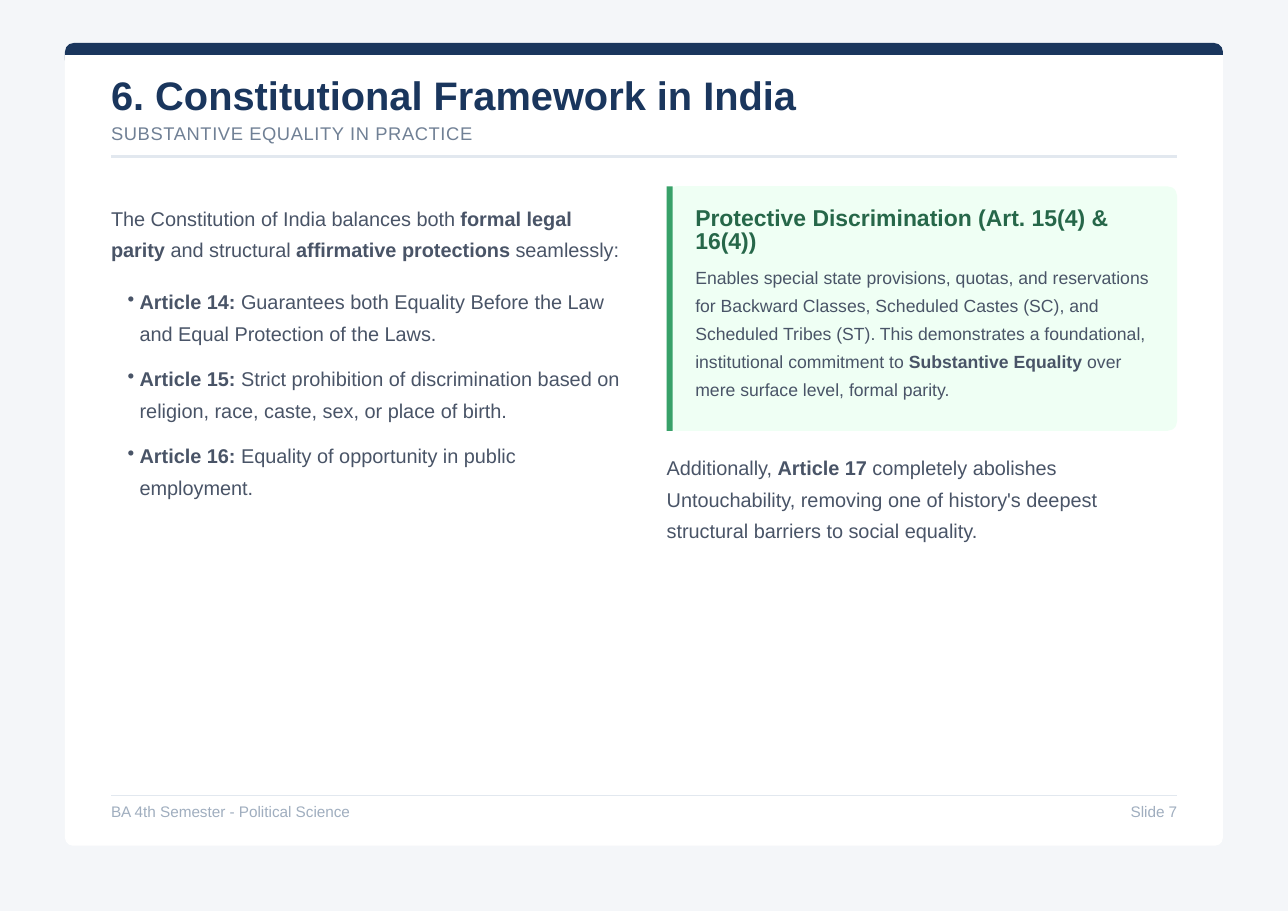
from pptx import Presentation
from pptx.dml.color import RGBColor
from pptx.enum.shapes import MSO_CONNECTOR, MSO_SHAPE
from pptx.enum.text import PP_ALIGN
from pptx.oxml.ns import qn
from pptx.util import Inches, Pt
from lxml.etree import SubElement

C = {"page": "F4F6F9", "card": "FFFFFF", "navy": "1A365D", "rule": "E2E8EF",
     "mint": "EFFFF4", "green": "38A169", "forest": "266749",
     "body": "495467", "muted": "708095", "footer": "A0AEBF"}
LEFT, RIGHT, WIDE = 8.62, 51.76, 82.78
MARGIN, CARD = 5.05, 89.9

prs = Presentation()
prs.slide_width, prs.slide_height = Inches(11.69), Inches(8.27)
s = prs.slides.add_slide(prs.slide_layouts[6])
s.background.fill.solid()
s.background.fill.fore_color.rgb = RGBColor.from_string(C["page"])


def area(x, y, w, h):
    W, H = prs.slide_width, prs.slide_height
    return [int(v * side / 100) for v, side in zip((x, y, w, h), (W, H, W, H))]


def add_text(place, paragraphs, align=PP_ALIGN.LEFT):
    tf = s.shapes.add_textbox(*area(*place)).text_frame
    tf.word_wrap = True
    tf.margin_left = tf.margin_right = tf.margin_top = tf.margin_bottom = 0
    for i, (text, size, color, bold, line, before, indent, bullet) in enumerate(paragraphs):
        p = tf.add_paragraph() if i else tf.paragraphs[0]
        pPr = p._p.get_or_add_pPr()
        pPr.set("marL", str(Inches(indent)))
        pPr.set("indent", str(Inches(-0.11 if bullet else 0)))
        if bullet:
            SubElement(pPr, qn("a:buChar")).set("char", "•")
        p.alignment = align
        p.space_before = Pt(before)
        if line:
            p.line_spacing = Pt(line)
        for j, part in enumerate(text.split("**")):
            if part:
                r = p.add_run()
                r.text = part
                r.font.name = "Arial"
                r.font.size = Pt(size)
                r.font.bold = bold or j % 2 == 1
                r.font.color.rgb = RGBColor.from_string(C[color])
    return tf


for kind, place, color, corners in [
    (MSO_SHAPE.ROUND_2_SAME_RECTANGLE, (MARGIN, 4.72, CARD, 1.9), "navy", (0.5, 0)),
    (MSO_SHAPE.ROUND_2_SAME_RECTANGLE, (MARGIN, 6.05, CARD, 86.78), "card", (0, 0.01)),
    (MSO_SHAPE.ROUNDED_RECTANGLE, (RIGHT, 20.45, 39.64, 26.85), "mint", (0.04,)),
    (MSO_SHAPE.RECTANGLE, (RIGHT, 20.45, 0.47, 26.85), "green", ()),
]:
    sp = s.shapes.add_shape(kind, *area(*place))
    sp.shadow.inherit = False
    sp.fill.solid()
    sp.fill.fore_color.rgb = RGBColor.from_string(C[color])
    sp.line.fill.background()
    for i, corner in enumerate(corners):
        sp.adjustments[i] = corner

for y, width in [(17.17, 1.5), (87.36, 0.75)]:
    x, top, w, _ = area(LEFT, y, WIDE, 0)
    ln = s.shapes.add_connector(MSO_CONNECTOR.STRAIGHT, x, top, x + w, top)
    ln.line.color.rgb = RGBColor.from_string(C["rule"])
    ln.line.width = Pt(width)
    SubElement(ln._element.spPr, qn("a:effectLst"))

heading = add_text((LEFT, 7.73, 70, 8), [
    ("6. Constitutional Framework in India", 26, "navy", True, None, 0, 0, False),
    ("SUBSTANTIVE EQUALITY IN PRACTICE", 12, "muted", False, None, 2.4, 0, False),
])
for r in heading.paragraphs[1].runs:
    r._r.get_or_add_rPr().set("spc", "40")

articles = [
    "**Article 14:** Guarantees both Equality Before the Law and Equal Protection of the Laws.",
    "**Article 15:** Strict prohibition of discrimination based on religion, race, caste, sex, or place of birth.",
    "**Article 16:** Equality of opportunity in public employment.",
]
add_text((LEFT, 21.8, 39.7, 33), [
    ("The Constitution of India balances both **formal legal parity** and structural "
     "**affirmative protections** seamlessly:", 13, "body", False, 20.7, 0, 0, False),
    *[(article, 13, "body", False, 20.7, 9 if i else 13, 0.26, True)
      for i, article in enumerate(articles)],
])

add_text((RIGHT, 22.83, 38, 37), [
    ("Protective Discrimination (Art. 15(4) & 16(4))", 15, "forest", True, 15, 0, 0.26, False),
    ("Enables special state provisions, quotas, and reservations for Backward Classes, "
     "Scheduled Castes (SC), and Scheduled Tribes (ST). This demonstrates a foundational, "
     "institutional commitment to **Substantive Equality** over mere surface level, "
     "formal parity.", 11.5, "body", False, 18.3, 4.3, 0.26, False),
    ("Additionally, **Article 17** completely abolishes Untouchability, removing one of "
     "history's deepest structural barriers to social equality.",
     13, "body", False, 20.7, 31, 0, False),
])

for x, label, align in [
    (LEFT, "BA 4th Semester - Political Science", PP_ALIGN.LEFT),
    (LEFT + WIDE / 2, "Slide 7", PP_ALIGN.RIGHT),
]:
    add_text((x, 88.4, WIDE / 2, 2),
             [(label, 10, "footer", False, 10.3, 0, 0, False)], align)

prs.save("out.pptx")
